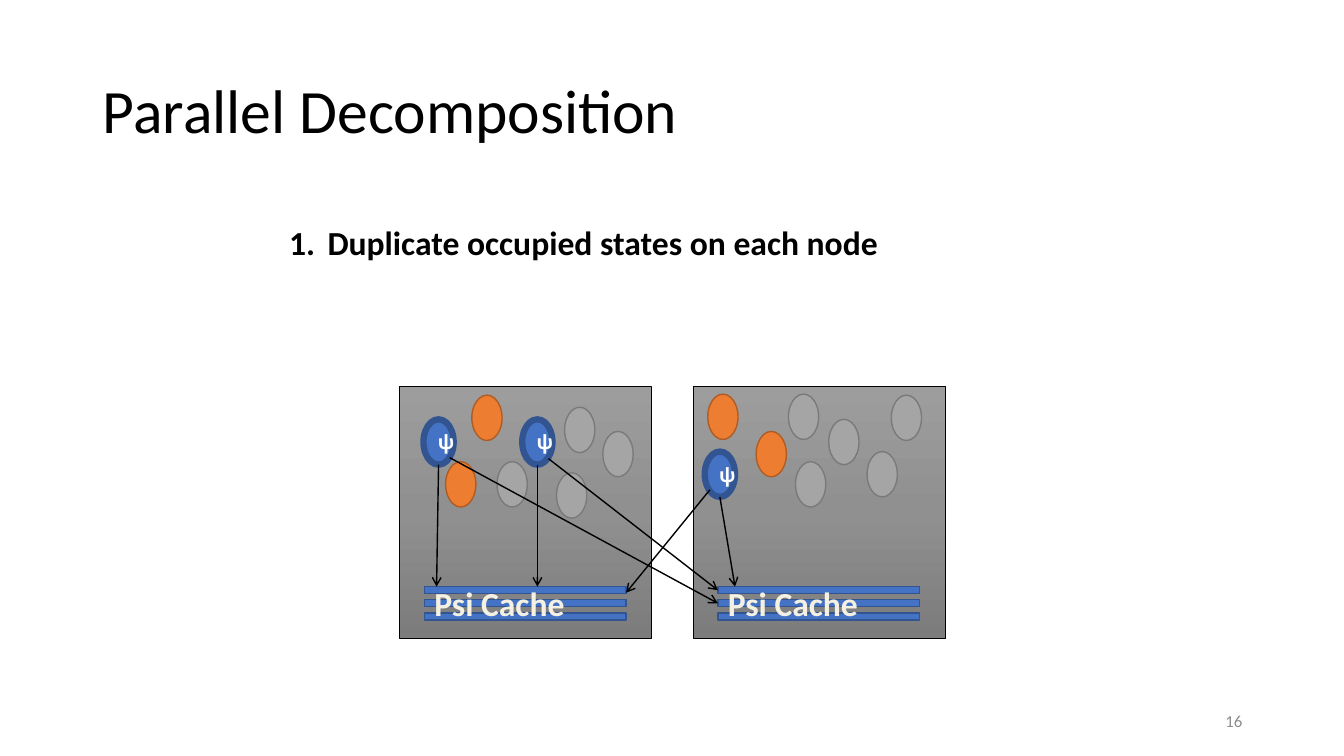
from copy import deepcopy

from pptx import Presentation
from pptx.dml.color import RGBColor
from pptx.enum.shapes import MSO_CONNECTOR, MSO_SHAPE
from pptx.enum.text import MSO_ANCHOR, MSO_AUTO_SIZE, PP_ALIGN
from pptx.oxml.ns import qn
from pptx.util import Inches, Pt
from lxml.etree import SubElement

BLUE, BLUE_EDGE = "4472C4", "325491"
ORANGE, ORANGE_EDGE = "ED7D31", "AF5C24"
GRAY, GRAY_EDGE = "A5A5A5", "7A7A7A"
NODE_LEFTS = [3.96, 6.88]
CACHE_LEFTS = [4.21, 7.12]
PSI_STATES = [(4.2, 4.16), (5.18, 4.16), (6.99, 4.48)]
OCCUPIED_STATES = [(4.68, 3.92), (4.42, 4.58), (7.02, 3.91), (7.5, 4.28)]
EMPTY_STATES = [(5.6, 4.04), (5.98, 4.28), (8.22, 4.16), (8.84, 3.92), (7.89, 4.58),
                (8.6, 4.48), (4.93, 4.58), (5.52, 4.69), (7.82, 3.91)]


def rgb(color):
    return RGBColor.from_string(color)


def add_run(p, text, size, color, bold=False, font="Calibri"):
    r = p.add_run()
    r.text = text
    r.font.size = Pt(size)
    r.font.name = font
    r.font.bold = bold
    r.font.color.rgb = rgb(color)
    return r


def add_text(s, box, text, size, color, bold=False, align=PP_ALIGN.LEFT,
             anchor=MSO_ANCHOR.MIDDLE, wrap=True):
    tf = s.shapes.add_textbox(*map(Inches, box)).text_frame
    tf.word_wrap = wrap
    tf.auto_size = MSO_AUTO_SIZE.NONE
    tf.vertical_anchor = anchor
    p = tf.paragraphs[0]
    p.alignment = align
    return p, add_run(p, text, size, color, bold)


def add_shape(s, kind, box, fill, edge, width):
    sp = s.shapes.add_shape(kind, *map(Inches, box))
    sp.shadow.inherit = False
    sp.fill.solid()
    sp.fill.fore_color.rgb = rgb(fill)
    sp.line.color.rgb = rgb(edge)
    sp.line.width = Pt(width)
    return sp


def add_title(s, text):
    title = s.shapes.title
    title.left, title.top, title.width, title.height = map(Inches, (0.92, 0.4, 11.5, 1.45))
    tf = title.text_frame
    tf.vertical_anchor = MSO_ANCHOR.MIDDLE
    p = tf.paragraphs[0]
    p.alignment = PP_ALIGN.LEFT
    p.line_spacing = 0.9
    add_run(p, text, 44, "000000")


def add_numbered(s, box, text):
    p, r = add_text(s, box, text, 24, "000000", True, anchor=MSO_ANCHOR.TOP)
    pPr = p._p.get_or_add_pPr()
    pPr.set("marL", str(Inches(0.38)))
    pPr.set("indent", str(-Inches(0.38)))
    SubElement(pPr, qn("a:buFont"), typeface="+mj-lt")
    SubElement(pPr, qn("a:buAutoNum"), type="arabicPeriod")


def add_node(s, left):
    sp = add_shape(s, MSO_SHAPE.RECTANGLE, (left, 3.83, 2.5, 2.5), "909090", "000000", 0.5)
    sp.fill.gradient()
    sp.fill.gradient_angle = 270
    first = sp._element.spPr.find(qn("a:gradFill")).find(qn("a:gsLst"))[0]
    first.addnext(deepcopy(first))
    stops = [(0, "9D9D9D"), (0.5, "909090"), (1, "7C7C7C")]
    for stop, (position, color) in zip(sp.fill.gradient_stops, stops):
        stop.position = position
        stop.color.rgb = rgb(color)


def add_state(s, left, top, fill, edge, width=1):
    return add_shape(s, MSO_SHAPE.OVAL, (left, top, 0.3, 0.45), fill, edge, width)


def add_psi_state(s, left, top):
    tf = add_state(s, left, top, BLUE, BLUE_EDGE, 4.5).text_frame
    tf.vertical_anchor = MSO_ANCHOR.MIDDLE
    p = tf.paragraphs[0]
    p.alignment = PP_ALIGN.CENTER
    add_run(p, "ψ", 14, "FFFFFF", True, "Open Sans")


def add_cache(s, left):
    return [add_shape(s, MSO_SHAPE.RECTANGLE, (left, 5.82 + 0.13 * row, 2, 0.07),
                      BLUE, BLUE_EDGE, 1) for row in range(3)]


def add_cache_label(s, left):
    p, r = add_text(s, (left, 5.73, 1.51, 0.5), "Psi Cache", 24, "F4F1E3", True, wrap=False)
    rPr = r.font._element
    ln = SubElement(rPr, qn("a:ln"), w=str(Pt(1)))
    fill = SubElement(ln, qn("a:solidFill"))
    SubElement(fill, qn("a:srgbClr"), val="054697")
    rPr.insert(0, ln)


def add_arrow(s, start, end, target=None):
    cn = s.shapes.add_connector(MSO_CONNECTOR.STRAIGHT, *map(Inches, start + end))
    if target is not None:
        cn.end_connect(target, 1)
    cn.line.color.rgb = rgb("000000")
    cn.line.width = Pt(1)
    SubElement(cn.line._get_or_add_ln(), qn("a:tailEnd"), type="arrow")
    SubElement(cn._element.spPr, qn("a:effectLst"))


def main():
    prs = Presentation()
    prs.slide_width, prs.slide_height = Inches(13.33), Inches(7.5)
    s = prs.slides.add_slide(prs.slide_layouts[5])
    add_title(s, "Parallel Decomposition")
    add_text(s, (9.42, 6.95, 3, 0.4), "16", 12, "8C8C8C", align=PP_ALIGN.RIGHT)
    add_numbered(s, (2.77, 2.15, 7.81, 0.5), "Duplicate occupied states on each node")

    for left in NODE_LEFTS:
        add_node(s, left)
    for left, top in PSI_STATES:
        add_psi_state(s, left, top)
    for left, top in OCCUPIED_STATES:
        add_state(s, left, top, ORANGE, ORANGE_EDGE)
    for left, top in EMPTY_STATES:
        add_state(s, left, top, GRAY, GRAY_EDGE)
    left_cache, right_cache = [add_cache(s, left) for left in CACHE_LEFTS]

    add_arrow(s, (4.35, 4.61), (4.33, 5.82))
    add_arrow(s, (4.46, 4.54), (7.12, 5.99), right_cache[1])
    add_arrow(s, (5.33, 4.61), (5.33, 5.82))
    add_arrow(s, (5.44, 4.55), (7.12, 5.85), right_cache[0])
    add_arrow(s, (7.04, 4.86), (6.21, 5.88))
    add_arrow(s, (7.14, 4.93), (7.29, 5.82))
    for left in CACHE_LEFTS:
        add_cache_label(s, left)
    prs.save("out.pptx")


if __name__ == "__main__":
    main()
